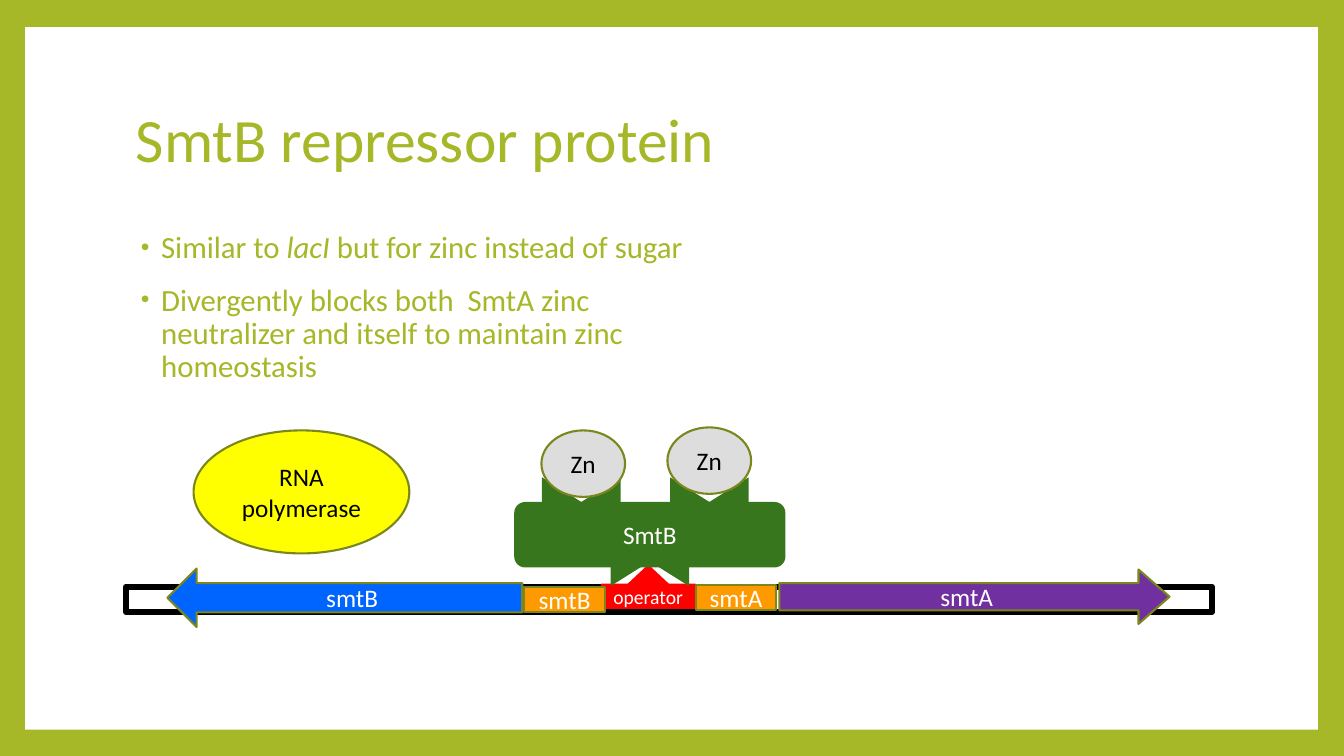
from dataclasses import dataclass

from lxml.etree import SubElement
from pptx import Presentation
from pptx.dml.color import RGBColor
from pptx.enum.shapes import MSO_SHAPE as Preset
from pptx.enum.text import MSO_ANCHOR as Anchor, PP_ALIGN as Align
from pptx.oxml.ns import qn
from pptx.util import Inches, Pt

FONT = "Calibri"
COLORS = {
    "lime": "A6B727", "olive": "7B871D", "white": "FFFFFF", "black": "000000",
    "red": "FF0000", "orange": "FF9900", "green": "38761D", "blue": "0064FF",
    "purple": "7030A0", "yellow": "FFFF00", "gray": "DDDDDD",
}


@dataclass(frozen=True)
class Part:
    preset: Preset
    left: float
    top: float
    width: float
    height: float
    fill: str
    line: str = ""
    line_width: float = 1.5
    text: str = ""
    text_color: str = "white"
    size: float = 18
    rotation: float = 0
    adjustments: tuple[float, ...] = ()


def color(name: str) -> RGBColor:
    return RGBColor.from_string(COLORS[name])


def add_span(para, text: str, size: float, color_name: str, italic: bool = False) -> None:
    span = para.add_run()
    span.text = text
    span.font.name = FONT
    span.font.size = Pt(size)
    span.font.italic = italic
    span.font.color.rgb = color(color_name)


def add_part(page, part: Part) -> None:
    shape = page.shapes.add_shape(
        part.preset, Inches(part.left), Inches(part.top),
        Inches(part.width), Inches(part.height))
    shape.shadow.inherit = False
    shape.rotation = part.rotation
    for index, value in enumerate(part.adjustments):
        shape.adjustments[index] = value
    shape.fill.solid()
    shape.fill.fore_color.rgb = color(part.fill)
    if part.line:
        shape.line.color.rgb = color(part.line)
        shape.line.width = Pt(part.line_width)
    else:
        shape.line.fill.background()
    if part.text:
        frame = shape.text_frame
        frame.word_wrap = True
        frame.vertical_anchor = Anchor.MIDDLE
        para = frame.paragraphs[0]
        para.alignment = Align.CENTER
        add_span(para, part.text, part.size, part.text_color)


def add_text_box(page, left: float, top: float, width: float, height: float, anchor: Anchor):
    box = page.shapes.add_textbox(Inches(left), Inches(top), Inches(width), Inches(height))
    box.text_frame.word_wrap = True
    box.text_frame.vertical_anchor = anchor
    return box.text_frame


def add_bullet(para) -> None:
    properties = para._p.get_or_add_pPr()
    properties.set("marL", str(Inches(0.25)))
    properties.set("indent", str(Inches(-0.2)))
    bullet_color = SubElement(properties, qn("a:buClr"))
    SubElement(bullet_color, qn("a:srgbClr"), val=COLORS["lime"])
    SubElement(properties, qn("a:buSzPct"), val="80000")
    SubElement(properties, qn("a:buFont"), typeface="Arial")
    SubElement(properties, qn("a:buChar"), char="•")


def promoter(left: float, top: float, gene: str) -> Part:
    return Part(Preset.RECTANGLE, left, top, 0.8, 0.25, "orange", "olive", text=gene)


def binding_site(left: float, top: float, rotation: float) -> Part:
    return Part(Preset.CHEVRON, left, top, 0.49, 0.78, "green", rotation=rotation)


def zinc(left: float, top: float) -> Part:
    return Part(Preset.OVAL, left, top, 0.83, 0.66, "gray", "olive",
                text="Zn", text_color="black")


PANEL = Part(Preset.RECTANGLE, 0.25, 0.27, 12.82, 6.97, "white")
BULLETS = [
    [("Similar to ", False), ("lacI", True), (" but for zinc instead of sugar", False)],
    [("Divergently blocks both  SmtA zinc neutralizer and itself "
      "to maintain zinc homeostasis", False)],
]
DIAGRAM = [
    # DNA strand and operator
    Part(Preset.RECTANGLE, 1.25, 5.82, 10.77, 0.25, "white", "black", 4.5),
    Part(Preset.ISOSCELES_TRIANGLE, 5.96, 5.6, 0.94, 0.44, "red"),
    Part(Preset.RECTANGLE, 5.96, 5.79, 0.94, 0.25, "red", text="operator", size=14),
    promoter(5.2, 5.82, "smtB"),
    # Repressor with its binding sites
    binding_site(5.52, 4.59, 90),
    binding_site(6.79, 4.59, 90),
    binding_site(6.2, 5.18, 270),
    Part(Preset.ROUNDED_RECTANGLE, 5.1, 4.98, 2.69, 0.65, "green", text="SmtB"),
    # Genes
    promoter(6.9, 5.8, "smtA"),
    Part(Preset.LEFT_ARROW, 1.66, 5.64, 3.52, 0.58, "blue", "olive", text="smtB"),
    Part(Preset.RIGHT_ARROW, 7.73, 5.65, 3.87, 0.54, "purple", "olive", text="smtA",
         adjustments=(0.5, 0.57)),
    # Polymerase and zinc ions
    Part(Preset.OVAL, 1.92, 4.27, 2.14, 1.22, "yellow", "olive",
         text="RNA polymerase", text_color="black"),
    zinc(5.37, 4.27),
    zinc(6.62, 4.24),
]


def main() -> None:
    deck = Presentation()
    deck.slide_width = Inches(13.33)
    deck.slide_height = Inches(7.5)
    page = deck.slides.add_slide(deck.slide_layouts[6])

    # Lime frame around a white panel
    page.background.fill.solid()
    page.background.fill.fore_color.rgb = color("lime")
    add_part(page, PANEL)

    # Title
    title = add_text_box(page, 1.25, 0.67, 10.8, 1.48, Anchor.MIDDLE).paragraphs[0]
    title.line_spacing = 0.9
    add_span(title, "SmtB repressor protein", 44, "lime")

    # Bullets
    body = add_text_box(page, 1.25, 2.25, 5.81, 2.29, Anchor.TOP)
    for index, spans in enumerate(BULLETS):
        para = body.add_paragraph() if index else body.paragraphs[0]
        add_bullet(para)
        para.line_spacing = 0.9
        para.space_before = Pt(14 if index else 0)
        for text, italic in spans:
            add_span(para, text, 22, "lime", italic)

    # Gene diagram
    for part in DIAGRAM:
        add_part(page, part)

    deck.save("out.pptx")


if __name__ == "__main__":
    main()
